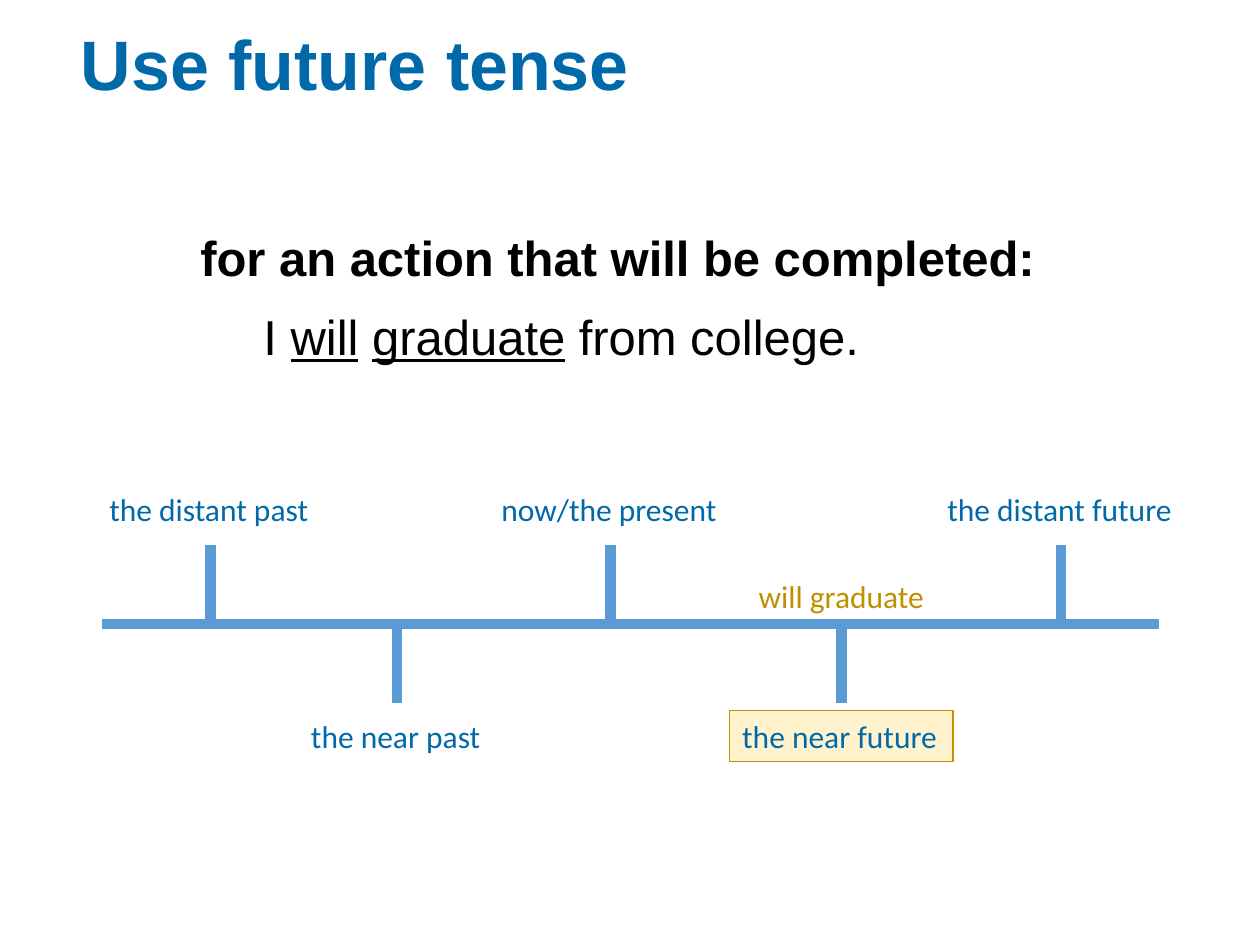
from lxml import etree
from pptx import Presentation
from pptx.dml.color import RGBColor
from pptx.enum.shapes import MSO_CONNECTOR
from pptx.enum.text import MSO_ANCHOR, MSO_AUTO_SIZE, PP_ALIGN
from pptx.oxml.ns import qn
from pptx.util import Pt

STRAIGHT = MSO_CONNECTOR.STRAIGHT
MIDDLE, TOP = MSO_ANCHOR.MIDDLE, MSO_ANCHOR.TOP
NO_FIT, GROW = MSO_AUTO_SIZE.NONE, MSO_AUTO_SIZE.SHAPE_TO_FIT_TEXT
LEFT, CENTER = PP_ALIGN.LEFT, PP_ALIGN.CENTER
BLUE, GOLD, CREAM, SKY, BLACK = "0069AA", "BF9000", "FFF2CC", "5B9BD5", "000000"


def color(value):
    return RGBColor.from_string(value)


def add_text(paragraph, text, size=18, font="Calibri", fill=BLUE, bold=False,
             underline=False, align=LEFT):
    paragraph.alignment = align
    run = paragraph.add_run()
    run.text = text
    run.font.size = Pt(size)
    run.font.name = font
    run.font.bold = bold
    run.font.underline = underline
    run.font.color.rgb = color(fill)


presentation = Presentation()
presentation.slide_width, presentation.slide_height = Pt(720), Pt(540)
slide = presentation.slides.add_slide(presentation.slide_layouts[1])
title, body = slide.shapes.title, slide.placeholders[1]

for placeholder, box, anchor in [
    (title, (39, 21, 643, 36), MIDDLE),
    (body, (107.3, 119.5, 507, 145.5), TOP),
]:
    placeholder.left, placeholder.top, placeholder.width, placeholder.height = map(Pt, box)
    placeholder.text_frame.vertical_anchor = anchor
    placeholder.text_frame.auto_size = NO_FIT
    placeholder.text_frame.word_wrap = True

heading = title.text_frame.paragraphs[0]
heading.line_spacing = 0.9
add_text(heading, "Use future tense", size=40, font="Arial", bold=True)

rule = body.text_frame.paragraphs[0]
example = body.text_frame.add_paragraph()
example.level = 1
for paragraph, indent, space in [(rule, 0, 0), (example, 36, 5)]:
    paragraph.line_spacing = 1.2
    paragraph.space_before = Pt(space)
    properties = paragraph._p.get_or_add_pPr()
    properties.set("marL", str(Pt(indent)))
    properties.set("indent", "0")
    etree.SubElement(properties, qn("a:buNone"))

add_text(rule, "for an action that will be completed:",
         size=28, font="Arial", fill=BLACK, bold=True)
for text, underline in [("I ", False), ("will", True), (" ", False),
                        ("graduate", True), (" from college.", False)]:
    add_text(example, text, size=28, font="Arial", fill=BLACK, underline=underline)

axis_y, tick_length = 356.6, 45
above_y, below_y, action_y = 276.5, 406, 326.2
label_height = 29
near_future_x = 480.8

ticks = [
    ("the distant past", 120.2, 129.6, True),
    ("the near past", 226.8, 112.3, False),
    ("now/the present", 349, 139, True),
    ("the near future", near_future_x, 127.5, False),
    ("the distant future", 606.3, 144, True),
]

lines = [(58.3, axis_y, 662.4, axis_y)]
labels = []
for text, x, width, is_above in ticks:
    end_y = axis_y - tick_length if is_above else axis_y + tick_length
    lines.append((x, axis_y, x, end_y))
    labels.append((text, x, above_y if is_above else below_y, width, BLUE, LEFT))
labels.append(("will graduate", near_future_x, action_y, 110.2, GOLD, CENTER))

for ends in lines:
    connector = slide.shapes.add_connector(STRAIGHT, *map(Pt, ends))
    connector.line.color.rgb = color(SKY)
    connector.line.width = Pt(6)
    etree.SubElement(connector._element.spPr, qn("a:effectLst"))

for text, center_x, top, width, fill, align in labels:
    label = slide.shapes.add_textbox(
        Pt(center_x - width / 2), Pt(top), Pt(width), Pt(label_height))
    label.text_frame.word_wrap = False
    label.text_frame.auto_size = GROW
    add_text(label.text_frame.paragraphs[0], text, fill=fill, align=align)
    if text == "the near future":
        label.fill.solid()
        label.fill.fore_color.rgb = color(CREAM)
        label.line.color.rgb = color(GOLD)
        label.line.width = Pt(0.75)

presentation.save("out.pptx")
